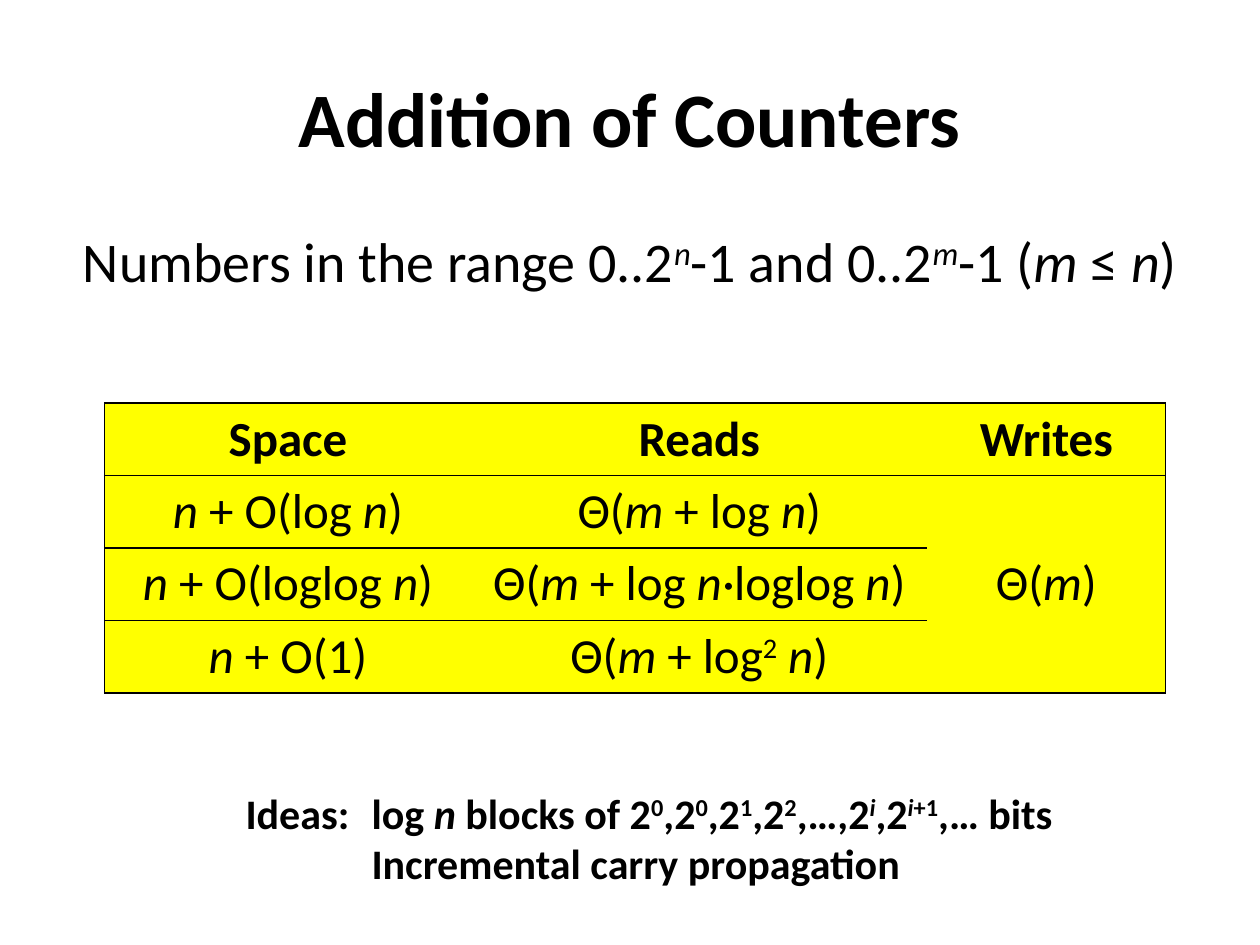
from lxml import etree
from pptx import Presentation
from pptx.dml.color import RGBColor
from pptx.enum.text import MSO_ANCHOR, PP_ALIGN
from pptx.oxml.ns import qn
from pptx.util import Pt

BLACK = RGBColor(0, 0, 0)
YELLOW = RGBColor(255, 255, 0)
CENTER, LEFT = PP_ALIGN.CENTER, PP_ALIGN.LEFT
TOP, MIDDLE = MSO_ANCHOR.TOP, MSO_ANCHOR.MIDDLE
FONT = "Calibri"
SUPERSCRIPT = "30000"

TITLE_BOX = (36, 21.6, 648, 90)
RANGE_BOX = (36, 126, 648, 59)
TABLE_BOX = (59.8, 230.4, 606.2, 165.6)
IDEAS_BOX = (133.2, 446.4, 553, 68)
COLUMN_WIDTHS = (209.5, 260.6, 136.1)
IDEAS_INDENT = 72

BOUNDS = [
    ("Space", "Reads", "Writes"),
    ("*n* + O(log *n*)", "Θ(*m* + log *n*)", "Θ(*m*)"),
    ("*n* + O(loglog *n*)", "Θ(*m* + log *n·*loglog *n*)", ""),
    ("*n* + O(1)", "Θ(*m* + log^2^ *n*)", ""),
]
IDEAS = [
    "Ideas:\tlog *n* blocks of 2^0^,2^0^,2^1^,2^2^,…,2^*i*^,2^*i*+1^,… bits",
    "Incremental carry propagation",
]


def write_math(para, markup, size, bold=False, align=CENTER):
    """Between * marks text is italic, between ^ marks it is raised."""
    para.alignment = align
    for level, part in enumerate(markup.split("^")):
        for slant, words in enumerate(part.split("*")):
            if not words:
                continue
            span = para.add_run()
            span.text = words
            values = {"name": FONT, "size": Pt(size), "bold": bold, "italic": slant % 2 == 1}
            for name, value in values.items():
                setattr(span.font, name, value)
            span.font.color.rgb = BLACK
            if level % 2:
                span.font._element.set("baseline", SUPERSCRIPT)


def add_text_frame(page, box, anchor=TOP):
    frame = page.shapes.add_textbox(*map(Pt, box)).text_frame
    frame.word_wrap = True
    frame.vertical_anchor = anchor
    return frame


def add_line_of_text(page, box, markup, size, bold=False, anchor=TOP):
    frame = add_text_frame(page, box, anchor)
    write_math(frame.paragraphs[0], markup, size, bold)


def set_borders(cell, visible):
    properties = cell._tc.get_or_add_tcPr()
    for side in "LRTB":
        line = etree.SubElement(properties, qn(f"a:ln{side}"), w=str(Pt(1)))
        if side in visible:
            fill = etree.SubElement(line, qn("a:solidFill"))
            etree.SubElement(fill, qn("a:srgbClr"), val=str(BLACK))
        else:
            etree.SubElement(line, qn("a:noFill"))


def add_bounds_table(page, box):
    last_column = len(COLUMN_WIDTHS) - 1
    table = page.shapes.add_table(len(BOUNDS), len(COLUMN_WIDTHS), *map(Pt, box)).table
    table.first_row = table.horz_banding = False
    for column, width in zip(table.columns, COLUMN_WIDTHS):
        column.width = Pt(width)
    for row in table.rows:
        row.height = Pt(box[3] / len(BOUNDS))
    table.cell(1, last_column).merge(table.cell(len(BOUNDS) - 1, last_column))
    for row_index, texts in enumerate(BOUNDS):
        for column_index, markup in enumerate(texts):
            cell = table.cell(row_index, column_index)
            sides = {0: "LTB", last_column: "RTB"}.get(column_index, "TB")
            if column_index == last_column and row_index:
                sides = {1: "RTB", len(BOUNDS) - 1: "RB"}.get(row_index, "R")
            set_borders(cell, sides)
            cell.fill.solid()
            cell.fill.fore_color.rgb = YELLOW
            cell.vertical_anchor = MIDDLE
            write_math(cell.text_frame.paragraphs[0], markup, 28, row_index == 0)


def add_ideas(page, box):
    frame = add_text_frame(page, box)
    for index, markup in enumerate(IDEAS):
        para = frame.add_paragraph() if index else frame.paragraphs[0]
        properties = para._p.get_or_add_pPr()
        properties.set("marL", str(Pt(IDEAS_INDENT)))
        properties.set("indent", str(Pt(0 if index else -IDEAS_INDENT)))
        write_math(para, markup, 24, True, LEFT)


def main():
    deck = Presentation()
    deck.slide_width, deck.slide_height = Pt(720), Pt(540)
    page = deck.slides.add_slide(deck.slide_layouts[6])
    add_line_of_text(page, TITLE_BOX, "Addition of Counters", 44, True, MIDDLE)
    add_line_of_text(
        page, RANGE_BOX, "Numbers in the range 0..2^*n*^-1 and 0..2^*m*^-1 (*m* ≤ *n*)", 32
    )
    add_bounds_table(page, TABLE_BOX)
    add_ideas(page, IDEAS_BOX)
    deck.save("out.pptx")


if __name__ == "__main__":
    main()
